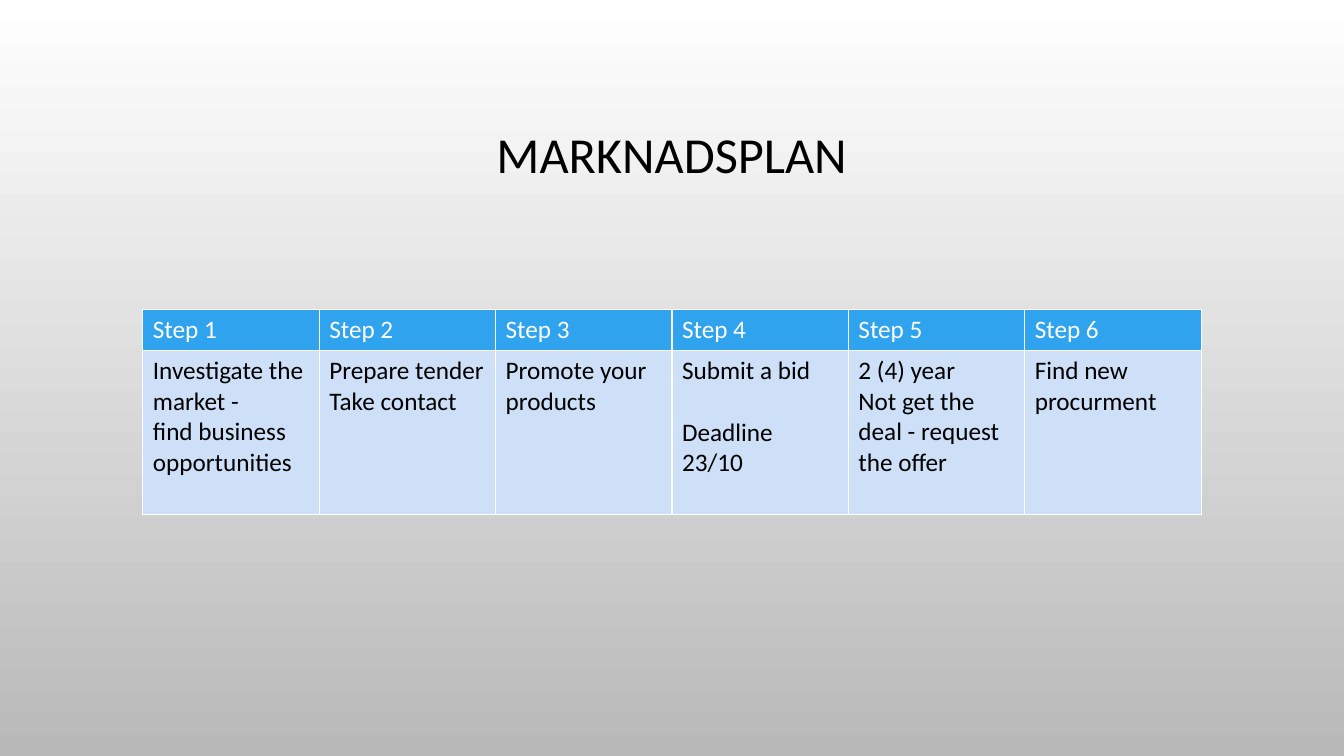
import pptx
import pptx.dml.color
import pptx.enum.text
import pptx.oxml
import pptx.oxml.ns
import pptx.util
from pptx.util import Cm

FONT = "Calibri"
STEPS = [
    ("Step 1", ["Investigate the market -\vfind business opportunities"]),
    ("Step 2", ["Prepare tender", "Take contact"]),
    ("Step 3", ["Promote your products"]),
    ("Step 4", ["Submit a bid", "Deadline 23/10"]),
    ("Step 5", ["2 (4) year", "Not get the deal - request the offer"]),
    ("Step 6", ["Find new procurment"]),
]
GAPS = {"Deadline 23/10": 22}


def color(text):
    """Turn a hex string into a colour."""
    return pptx.dml.color.RGBColor.from_string(text)


def style(para, size, tint):
    """Set the font of a paragraph."""
    para.font.name = FONT
    para.font.size = pptx.util.Pt(size)
    para.font.bold = False
    para.font.color.rgb = color(tint)


def shade(slide, top, bottom):
    """Fill the background with a gradient that runs downwards."""
    fill = slide.background.fill
    fill.gradient()
    fill.gradient_angle = 270
    for stop, tint in zip(fill.gradient_stops, (top, bottom)):
        stop.color.rgb = color(tint)


def edge(cell, tint):
    """Draw a thin line on all four sides of a cell."""
    props = cell._tc.get_or_add_tcPr()
    for place, side in enumerate(("lnL", "lnR", "lnT", "lnB")):
        line = pptx.oxml.parse_xml(
            f'<a:{side} {pptx.oxml.ns.nsdecls("a")} w="12700"><a:solidFill>'
            f'<a:srgbClr val="{tint}"/></a:solidFill></a:{side}>')
        props.insert(place, line)


def write(cell, lines, tint, back):
    """Fill a cell with its paragraphs and colours."""
    cell.fill.solid()
    cell.fill.fore_color.rgb = color(back)
    edge(cell, "FFFFFF")
    frame = cell.text_frame
    for index, line in enumerate(lines):
        para = frame.add_paragraph() if index else frame.paragraphs[0]
        para.text = line
        if line in GAPS:
            para.space_before = pptx.util.Pt(GAPS[line])
        style(para, 18, tint)


def title(slide, text, left, top, width, height):
    """Place the centred heading in the box."""
    frame = slide.shapes.add_textbox(left, top, width, height).text_frame
    frame.word_wrap = True
    frame.vertical_anchor = pptx.enum.text.MSO_ANCHOR.MIDDLE
    para = frame.paragraphs[0]
    para.text = text
    para.alignment = pptx.enum.text.PP_ALIGN.CENTER
    para.line_spacing = 0.9
    style(para, 36, "000000")


def plan(slide, left, top, width, height):
    """Place the table of steps in the box, one column a step."""
    table = slide.shapes.add_table(
        2, len(STEPS), left, top, width, height).table
    head = Cm(1.03)
    table.rows[0].height = head
    table.rows[1].height = height - head
    for index, (name, lines) in enumerate(STEPS):
        write(table.cell(0, index), [name], "FFFFFF", "2FA3EE")
        write(table.cell(1, index), lines, "000000", "CDE0F8")


def main():
    """Build the slide and save it."""
    deck = pptx.Presentation()
    deck.slide_width, deck.slide_height = Cm(33.87), Cm(19.05)
    slide = deck.slides.add_slide(deck.slide_layouts[6])
    shade(slide, "FFFFFF", "B9B9B9")
    title(slide, "MARKNADSPLAN", Cm(2.54), Cm(1.73), Cm(28.78), Cm(4.45))
    plan(slide, Cm(3.6), Cm(7.8), Cm(26.67), Cm(5.16))
    deck.save("out.pptx")


if __name__ == "__main__":
    main()
